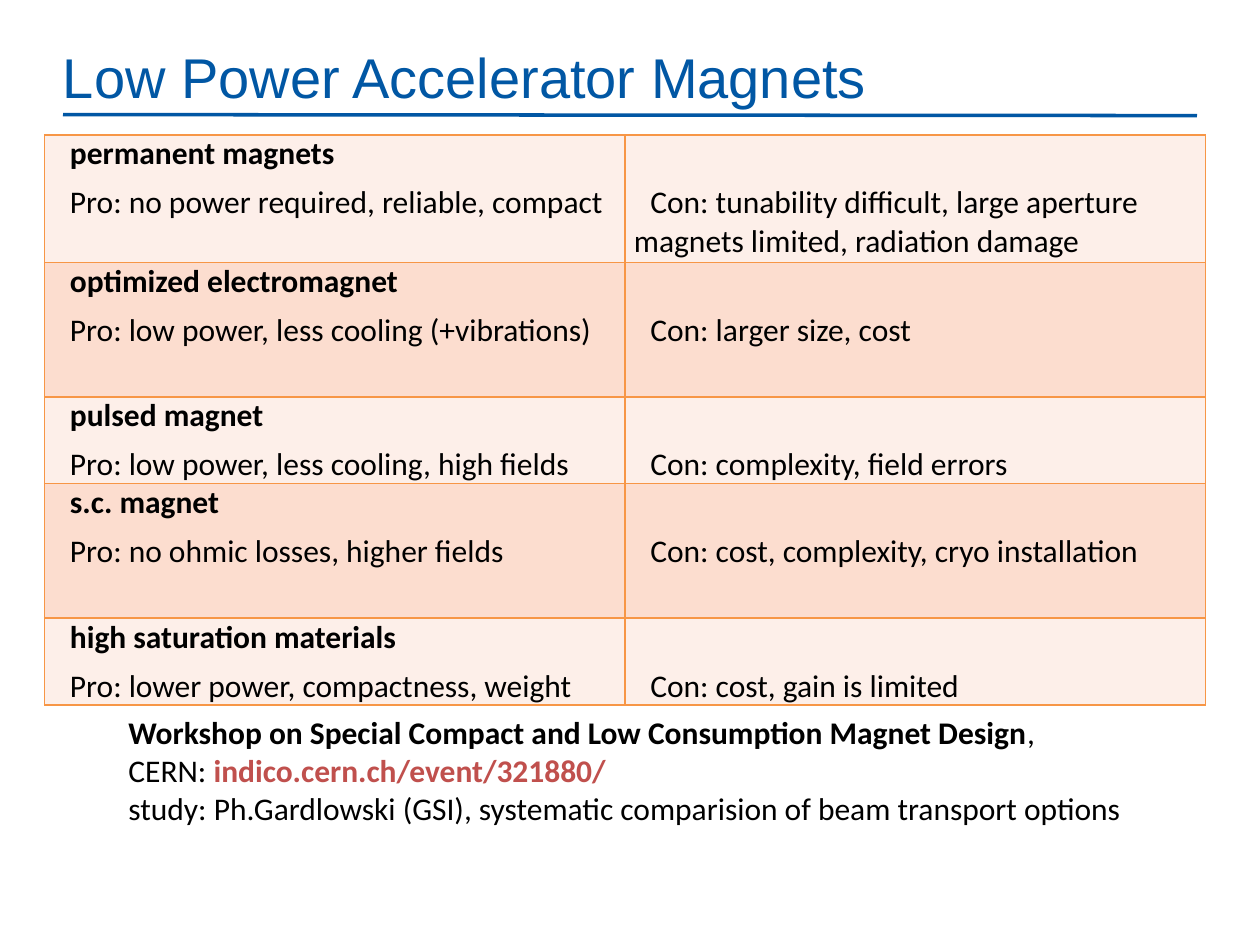
from pptx import Presentation
from pptx.dml.color import RGBColor
from pptx.enum.shapes import MSO_CONNECTOR
from pptx.enum.text import MSO_ANCHOR, PP_ALIGN
from pptx.oxml import parse_xml
from pptx.oxml.ns import nsdecls
from pptx.util import Cm, Pt

COLORS = {"blue": "0157A4", "black": "000000", "link": "C0504D",
          "edge": "F79646", "light": "FDEFE9", "dark": "FCDDCF"}

# name, pro, con, row height in cm, justified
MAGNETS = [
    ("permanent magnets", "Pro: no power required, reliable, compact",
     "Con: tunability difficult, large aperture magnets limited, radiation damage", 2.57, True),
    ("optimized electromagnet", "Pro: low power, less cooling (+vibrations)",
     "Con: larger size, cost", 2.71, False),
    ("pulsed magnet", "Pro: low power, less cooling, high fields",
     "Con: complexity, field errors", 1.73, True),
    ("s.c. magnet", "Pro: no ohmic losses, higher fields",
     "Con: cost, complexity, cryo installation", 2.71, False),
    ("high saturation materials", "Pro: lower power, compactness, weight",
     "Con: cost, gain is limited", 1.73, False),
]

# one list of (text, bold, colour) runs for each line
NOTES = [
    [("Workshop on Special Compact and Low Consumption Magnet Design", True, "black"),
     (",", False, "black")],
    [("CERN: ", False, "black"), ("indico.cern.ch/event/321880/", True, "link")],
    [("study: Ph.Gardlowski (GSI), systematic comparision of beam transport options",
      False, "black")],
]


def rgb(name):
    return RGBColor.from_string(COLORS[name])


def style(font, color="black", bold=False, size=18, face="Calibri"):
    font.name, font.size, font.bold = face, Pt(size), bold
    font.color.rgb = rgb(color)


def add_title(slide, left, top, width, height):
    """Add the heading and the rule below it."""
    frame = slide.shapes.add_textbox(Cm(left), Cm(top), Cm(width), Cm(height)).text_frame
    frame.word_wrap = True
    frame.vertical_anchor = MSO_ANCHOR.MIDDLE
    frame.margin_left = frame.margin_right = frame.margin_top = frame.margin_bottom = 0
    frame.text = "Low Power Accelerator Magnets"
    style(frame.paragraphs[0].runs[0].font, "blue", size=32, face="Arial")
    base = top + height
    rule = slide.shapes.add_connector(MSO_CONNECTOR.STRAIGHT, Cm(left), Cm(base),
                                      Cm(left + width), Cm(base + 0.02))
    rule.line.color.rgb = rgb("blue")
    rule.line.width = Pt(2)
    rule._element.spPr.append(parse_xml(f"<a:effectLst {nsdecls('a')}/>"))


def add_edges(cell):
    props = cell._tc.get_or_add_tcPr()
    for side in "LRTB":
        props.append(parse_xml(
            f'<a:ln{side} {nsdecls("a")} w="{Pt(1)}"><a:solidFill>'
            f'<a:srgbClr val="{COLORS["edge"]}"/></a:solidFill></a:ln{side}>'))


def fill_cell(cell, lines, tint, align, drop=0):
    """Write (text, bold) lines, starting drop below the top of the cell."""
    add_edges(cell)
    cell.fill.solid()
    cell.fill.fore_color.rgb = rgb(tint)
    cell.margin_left = cell.margin_right = Cm(0.18)
    cell.margin_top, cell.margin_bottom = drop, 0
    frame = cell.text_frame
    frame.text = "\n".join(text for text, _ in lines)
    for para, (_, bold) in zip(frame.paragraphs, lines):
        para._p.get_or_add_pPr().set("indent", str(Cm(0.33)))
        para.alignment = align
        para.space_after = Pt(6)
        style(para.runs[0].font, bold=bold)


def add_magnets(slide, left, top, width):
    height = sum(row[3] for row in MAGNETS)
    table = slide.shapes.add_table(len(MAGNETS), 2, Cm(left), Cm(top),
                                   Cm(width), Cm(height)).table
    table.first_row = table.horz_banding = False
    for col in table.columns:
        col.width = Cm(width / 2)
    for i, (name, pro, con, tall, even) in enumerate(MAGNETS):
        table.rows[i].height = Cm(tall)
        tint = ("light", "dark")[i % 2]
        align = PP_ALIGN.JUSTIFY if even else PP_ALIGN.LEFT
        fill_cell(table.cell(i, 0), [(name, True), (pro, False)], tint, align)
        fill_cell(table.cell(i, 1), [(con, False)], tint, PP_ALIGN.LEFT, Pt(28))


def add_notes(slide, left, top, width, height):
    frame = slide.shapes.add_textbox(Cm(left), Cm(top), Cm(width), Cm(height)).text_frame
    frame.word_wrap = True
    for i, line in enumerate(NOTES):
        para = frame.add_paragraph() if i else frame.paragraphs[0]
        for text, bold, color in line:
            run = para.add_run()
            run.text = text
            style(run.font, color, bold)


def main():
    deck = Presentation()
    deck.slide_width, deck.slide_height = Cm(25.4), Cm(19.05)
    slide = deck.slides.add_slide(deck.slide_layouts[6])
    add_title(slide, 1.27, 0.76, 22.86, 1.55)
    add_magnets(slide, 0.9, 2.72, 23.4)
    add_notes(slide, 2.34, 14.25, 21.36, 2.57)
    deck.save("out.pptx")


if __name__ == "__main__":
    main()
